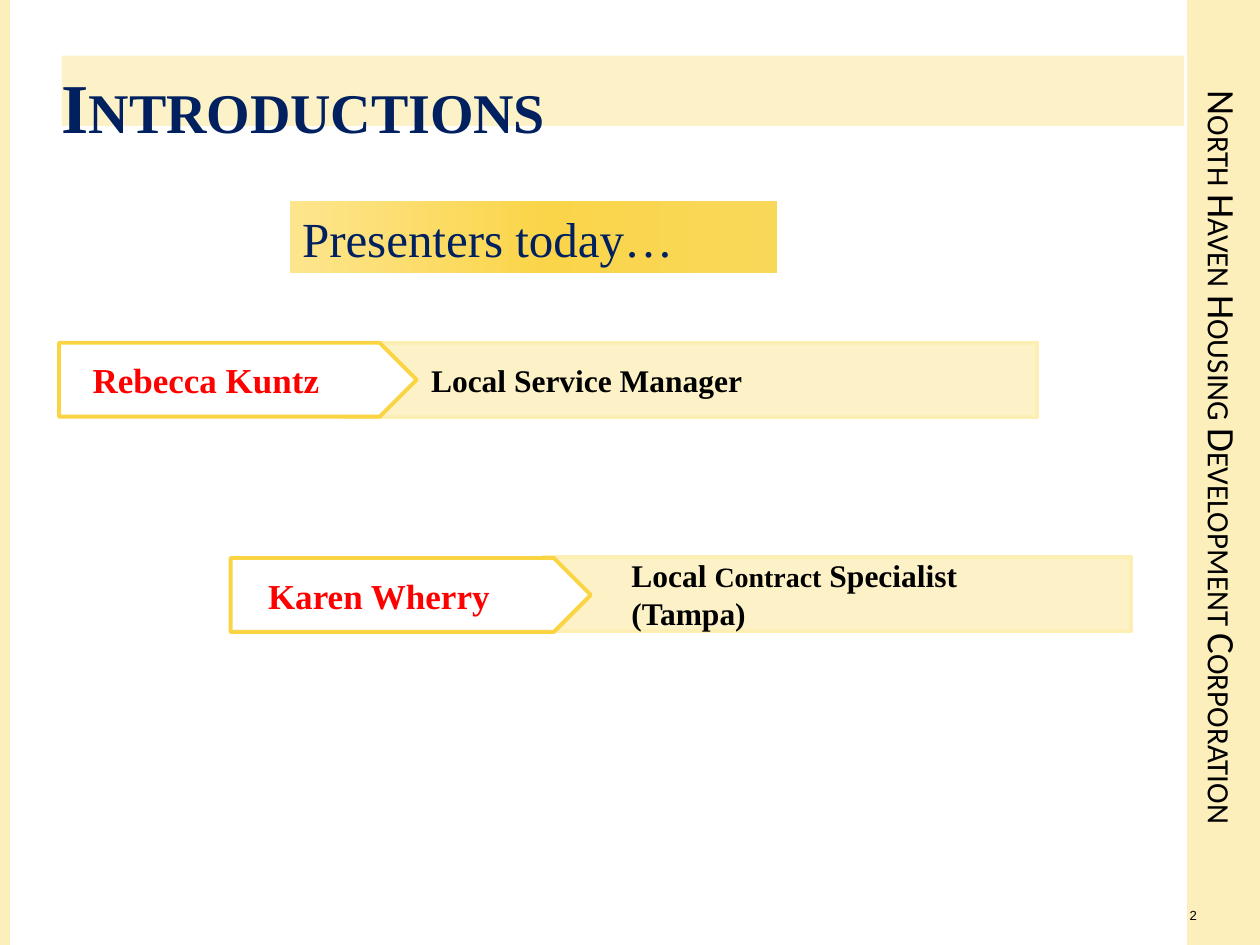
from lxml.etree import SubElement
from pptx import Presentation
from pptx.dml.color import RGBColor
from pptx.enum.shapes import MSO_SHAPE
from pptx.enum.text import MSO_ANCHOR, PP_ALIGN
from pptx.oxml.ns import qn
from pptx.util import Cm, Pt

COLORS = {
    "band": "FCEFBC", "panel": "FDF2C7", "panel line": "FDEEB4", "gold": "FBD443",
    "white": "FFFFFF", "black": "000000", "navy": "002060", "red": "FF0000",
}
SERIF = "Times New Roman"
ORGANIZATION = "North Haven Housing Development Corporation"
TITLE = "Introductions"
SUBTITLE = "Presenters today…"
SUBTITLE_GRADIENT = [(0, "FDE58E"), (52, "FBD549"), (100, "F9D859")]
# Role lines are lists of (text, size); tag and panel are (left, top, width) in cm.
PRESENTERS = [
    {"name": "Rebecca Kuntz", "tag": (1.19, 6.91, 7.21), "panel": (6.91, 6.91, 14.0),
     "role": [[("Local Service Manager", 18)]]},
    {"name": "Karen Wherry", "tag": (4.65, 11.25, 7.26), "panel": (10.95, 11.23, 11.86),
     "role": [[("Local ", 18), ("Contract", 16), (" Specialist", 18)], [("(Tampa)", 18)]]},
]
ROW_HEIGHT = 1.49
SLIDE_WIDTH, SLIDE_HEIGHT = 25.4, 19.05
SIDE_LEFT, SIDE_WIDTH, EDGE_WIDTH = 23.93, 1.47, 0.2


def color(name):
    return RGBColor.from_string(COLORS[name])


def format_font(font, size, ink, family=SERIF, bold=False):
    font.size, font.name, font.bold = Pt(size), family, bold
    font.color.rgb = color(ink)


def set_frame(frame, anchor, left=0.0, top=0.0, right=0.0, bottom=0.0):
    frame.word_wrap, frame.vertical_anchor = True, anchor
    frame.margin_left, frame.margin_top = Cm(left), Cm(top)
    frame.margin_right, frame.margin_bottom = Cm(right), Cm(bottom)


def add_box(shapes, kind, left, top, width, height, fill, line=None):
    box = shapes.add_shape(kind, Cm(left), Cm(top), Cm(width), Cm(height))
    box.shadow.inherit = False
    box.fill.solid()
    box.fill.fore_color.rgb = color(fill)
    if line:
        box.line.color.rgb = color(line)
        box.line.width = Pt(2.25)
    else:
        box.line.fill.background()
    return box


def add_presenter(page, presenter):
    group = page.shapes.add_group_shape()
    panel = add_box(group.shapes, MSO_SHAPE.RECTANGLE, *presenter["panel"], ROW_HEIGHT,
                    "panel", "panel line")
    frame = panel.text_frame
    set_frame(frame, MSO_ANCHOR.MIDDLE, left=1.42, right=0.13)
    for number, line in enumerate(presenter["role"]):
        para = frame.add_paragraph() if number else frame.paragraphs[0]
        para.alignment = PP_ALIGN.LEFT
        para._p.get_or_add_pPr().set("marL", str(Cm(0.36)))
        for text, size in line:
            span = para.add_run()
            span.text = text
            format_font(span.font, size, "black", bold=True)

    tag = add_box(group.shapes, MSO_SHAPE.PENTAGON, *presenter["tag"], ROW_HEIGHT,
                  "white", "gold")
    tag.adjustments[0] = 0.5
    tag.text_frame.text = presenter["name"]
    set_frame(tag.text_frame, MSO_ANCHOR.MIDDLE, left=0.23, right=1.14)
    para = tag.text_frame.paragraphs[0]
    para.alignment = PP_ALIGN.CENTER
    format_font(para.runs[0].font, 20, "red", bold=True)


def add_side_bands(page):
    for left, width in ((SIDE_LEFT, SIDE_WIDTH), (0, EDGE_WIDTH)):
        add_box(page.shapes, MSO_SHAPE.RECTANGLE, left, 0, width, SLIDE_HEIGHT, "band")
    box = page.shapes.add_textbox(Cm(SIDE_LEFT), Cm(1.07), Cm(SIDE_WIDTH), Cm(16.31))
    frame = box.text_frame
    frame.text = ORGANIZATION
    frame.word_wrap, frame.vertical_anchor = True, MSO_ANCHOR.MIDDLE
    frame._txBody.bodyPr.set("vert", "vert")
    para = frame.paragraphs[0]
    para.alignment = PP_ALIGN.CENTER
    format_font(para.runs[0].font, 22.2, "black", "Calibri")
    para.runs[0].font._element.set("cap", "small")


def format_title(title):
    title.left, title.top, title.width, title.height = Cm(1.24), Cm(1.12), Cm(22.63), Cm(1.42)
    title.fill.solid()
    title.fill.fore_color.rgb = color("panel")
    title.text_frame.text = TITLE
    set_frame(title.text_frame, MSO_ANCHOR.TOP, top=0.16)
    para = title.text_frame.paragraphs[0]
    para.alignment = PP_ALIGN.LEFT
    format_font(para.runs[0].font, 40, "navy", bold=True)
    para.runs[0].font._element.set("cap", "small")


def add_subtitle(page):
    box = add_box(page.shapes, MSO_SHAPE.RECTANGLE, 5.84, 4.06, 9.83, 1.45, "gold")
    box.fill.gradient()
    box.fill.gradient_angle = 0
    stops = box._element.spPr.find(qn("a:gradFill")).find(qn("a:gsLst"))
    for stop in list(stops):
        stops.remove(stop)
    for percent, tint in SUBTITLE_GRADIENT:
        stop = SubElement(stops, qn("a:gs"), pos=str(percent * 1000))
        SubElement(stop, qn("a:srgbClr"), val=tint)
    box.text_frame.text = SUBTITLE
    set_frame(box.text_frame, MSO_ANCHOR.BOTTOM, 0.25, 0.13, 0.25, 0.13)
    para = box.text_frame.paragraphs[0]
    para.alignment = PP_ALIGN.LEFT
    format_font(para.runs[0].font, 28, "navy")


def add_page_number(page):
    box = page.shapes.add_textbox(Cm(23.6), Cm(18.21), Cm(0.53), Cm(0.48))
    box.text_frame.text = "2"
    set_frame(box.text_frame, MSO_ANCHOR.MIDDLE)
    para = box.text_frame.paragraphs[0]
    para.alignment = PP_ALIGN.RIGHT
    format_font(para.runs[0].font, 7.5, "black", "Arial")


def main():
    deck = Presentation()
    deck.slide_width, deck.slide_height = Cm(SLIDE_WIDTH), Cm(SLIDE_HEIGHT)
    page = deck.slides.add_slide(deck.slide_layouts[5])
    add_side_bands(page)
    format_title(page.shapes.title)
    for presenter in PRESENTERS:
        add_presenter(page, presenter)
    add_subtitle(page)
    add_page_number(page)
    deck.save("out.pptx")


if __name__ == "__main__":
    main()
